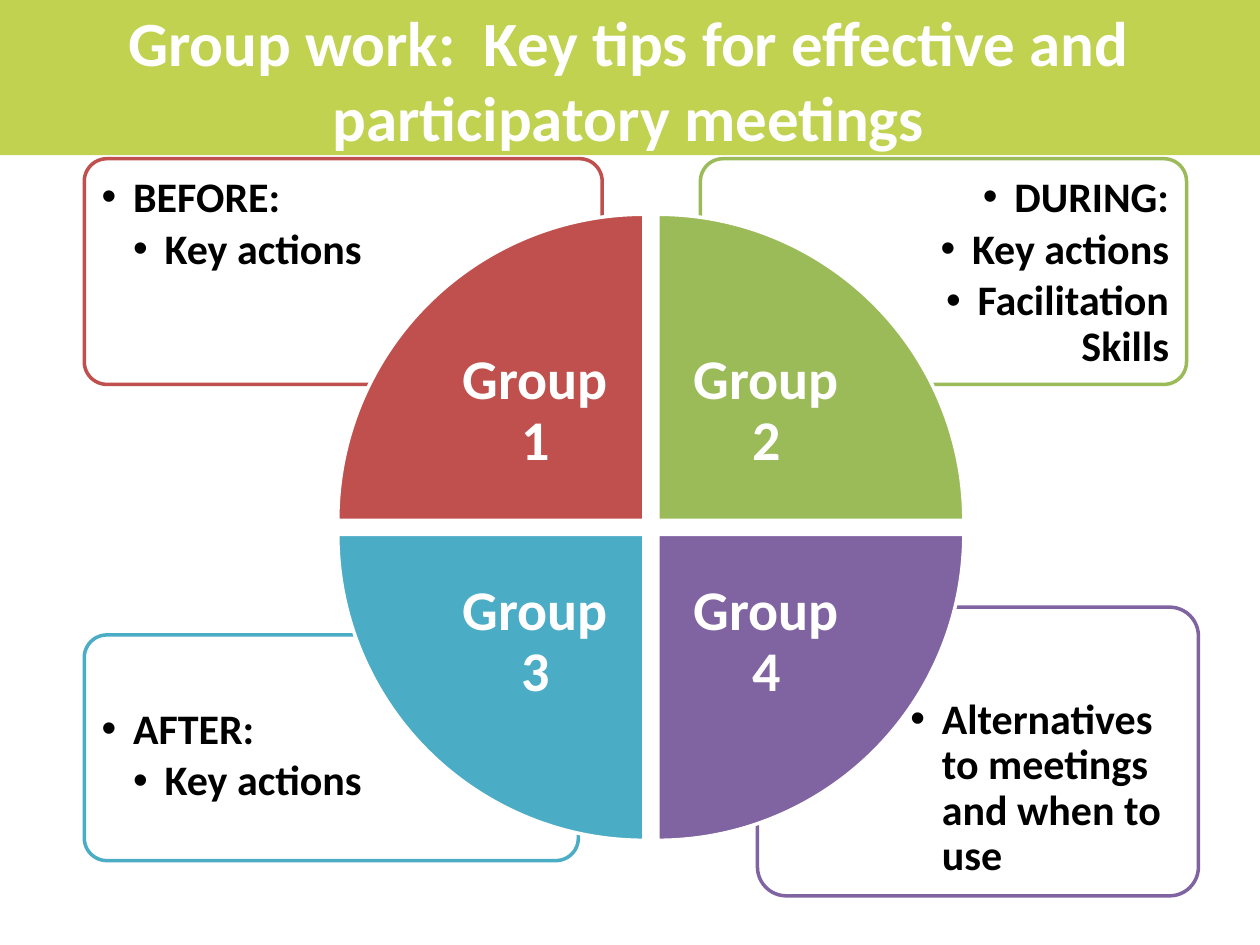
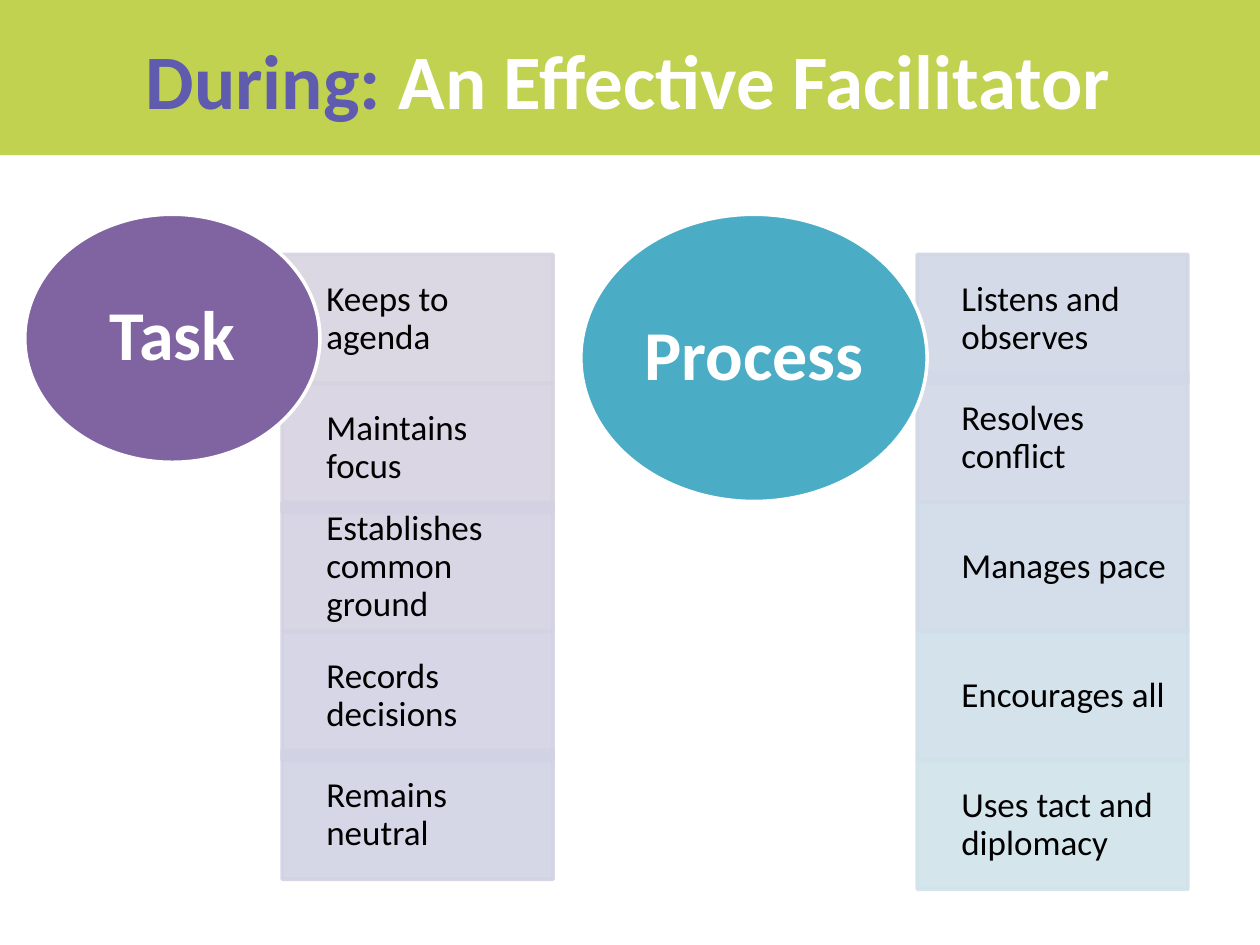
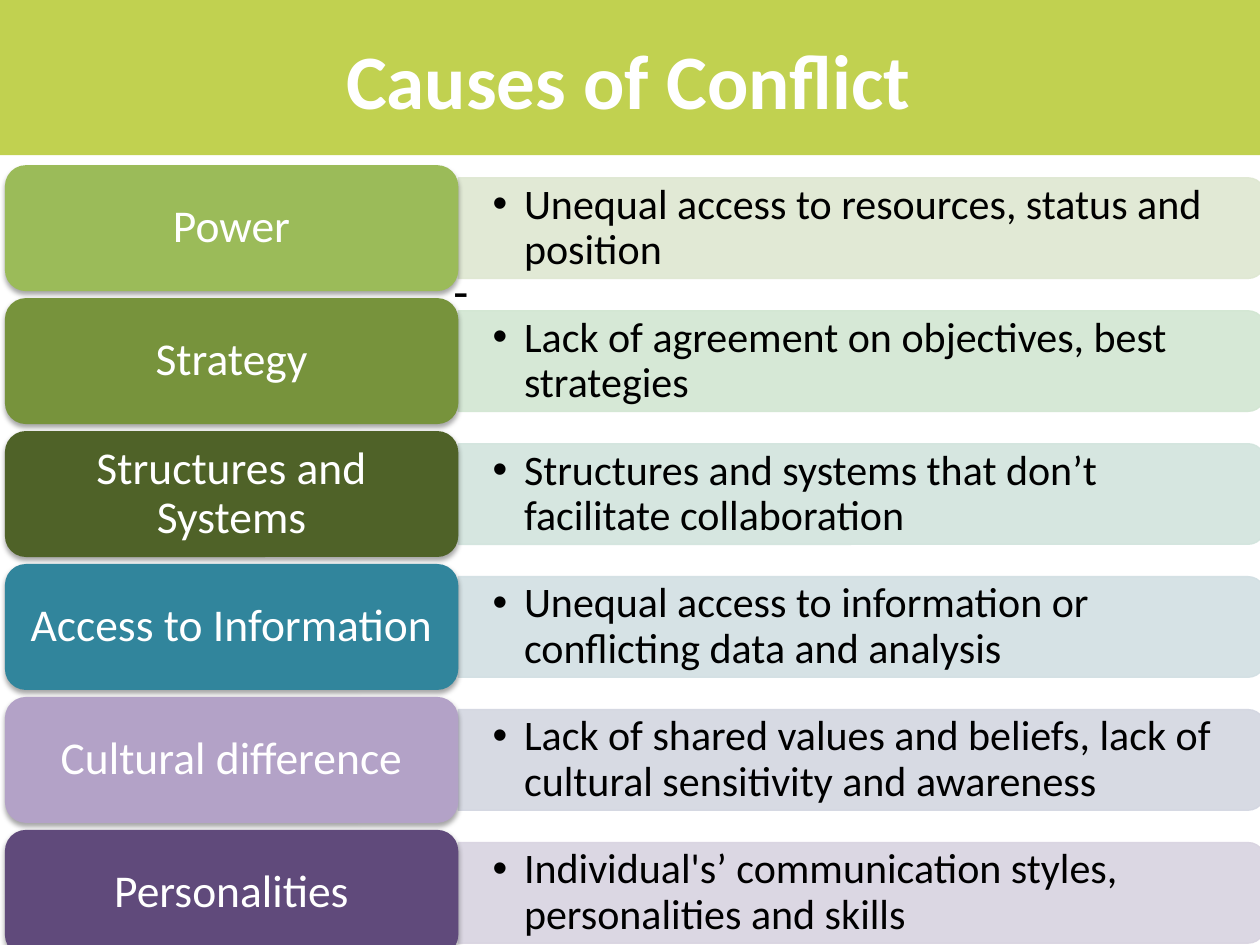
from dataclasses import dataclass
from itertools import accumulate

from lxml.etree import SubElement
from pptx import Presentation
from pptx.dml.color import RGBColor
from pptx.enum.shapes import MSO_SHAPE
from pptx.enum.text import MSO_ANCHOR, MSO_AUTO_SIZE, PP_ALIGN
from pptx.oxml.ns import qn
from pptx.util import Cm, Pt


@dataclass(frozen=True)
class Theme:
    font: str = "Calibri"
    band: str = "C1D150"
    white: str = "FFFFFF"
    black: str = "000000"
    accent: str = "5F5BAE"
    red: str = "C0504D"
    green: str = "9BBB59"
    blue: str = "4BACC6"
    purple: str = "8064A2"
    olive: str = "77933C"
    forest: str = "4F6228"
    teal: str = "31859C"
    lilac: str = "B3A2C7"
    plum: str = "604A7B"
    task_tints: tuple = ("D8D3E0", "D6D2E1", "D4D2E2", "D2D2E4", "D1D3E5")
    process_tints: tuple = ("D1D6E6", "D1D8E7", "D0DBE8", "D0DFE9", "D0E3EA")
    cause_tints: tuple = ("DEE7D1", "D2E6D2", "D2E4DD", "D2DFE3", "D3D6E1", "D8D3E0")
    title: int = 44
    long_title: int = 36
    oval: int = 40
    wedge: int = 32
    dash: int = 28
    label: int = 26
    body: int = 24
    item: int = 20


@dataclass(frozen=True)
class Box:
    left: float
    top: float
    width: float
    height: float

    def lengths(self):
        return Cm(self.left), Cm(self.top), Cm(self.width), Cm(self.height)


THEME = Theme()
BAND = Box(0, -0.05, 25.4, 3.18)
TITLE = Box(1.24, 0, 22.86, 3.18)


def write_text(paragraph, text, *, size, color=THEME.black, bold=False,
               align=PP_ALIGN.LEFT, spacing=0.9, after=0, depth=0):
    paragraph.alignment = align
    if depth:
        paragraph.level = depth
        properties = paragraph._p.get_or_add_pPr()
        properties.set("marL", str(Cm(0.635 * depth)))
        properties.set("indent", str(-Cm(0.635)))
        SubElement(properties, qn("a:buFont")).set("typeface", "Arial")
        SubElement(properties, qn("a:buChar")).set("char", "•")
    paragraph.line_spacing = spacing
    paragraph.space_after = Pt(after)
    run = paragraph.add_run()
    run.text = text
    run.font.name = THEME.font
    run.font.size = Pt(size)
    run.font.bold = bold
    run.font.color.rgb = RGBColor.from_string(color)


def prepare_frame(shape, margins=(0.25, 0.13, 0.25, 0.13), anchor=MSO_ANCHOR.MIDDLE, wrap=True):
    frame = shape.text_frame
    frame.word_wrap = wrap
    frame.auto_size = MSO_AUTO_SIZE.NONE
    frame.vertical_anchor = anchor
    (frame.margin_left, frame.margin_top,
     frame.margin_right, frame.margin_bottom) = map(Cm, margins)
    return frame


def add_text_box(slide, box, **frame_format):
    return prepare_frame(slide.shapes.add_textbox(*box.lengths()), **frame_format)


def add_panel(slide, kind, box, fill, line=None, line_width=2, opacity=100, rotation=0):
    shape = slide.shapes.add_shape(kind, *box.lengths())
    shape.rotation = rotation
    shape.shadow.inherit = False
    shape.fill.solid()
    shape.fill.fore_color.rgb = RGBColor.from_string(fill)
    if line:
        shape.line.color.rgb = RGBColor.from_string(line)
        shape.line.width = Pt(line_width)
    else:
        shape.line.fill.background()
    if opacity < 100:
        for color in shape.element.spPr.iter(qn("a:srgbClr")):
            SubElement(color, qn("a:alpha")).set("val", str(opacity * 1000))
    return shape


def add_shadow(shape):
    effects = shape.element.spPr.find(qn("a:effectLst"))
    shadow = SubElement(effects, qn("a:outerShdw"), blurRad=str(Pt(3)), dist=str(Pt(1.8)),
                        dir="5400000", rotWithShape="0")
    color = SubElement(shadow, qn("a:srgbClr"), val=THEME.black)
    SubElement(color, qn("a:alpha"), val="35000")


def add_titled_slide(presentation, *runs, size=THEME.title):
    slide = presentation.slides.add_slide(presentation.slide_layouts[5])
    title = slide.shapes.title
    title.left, title.top, title.width, title.height = TITLE.lengths()
    paragraph = prepare_frame(title).paragraphs[0]
    for text, color in runs:
        write_text(paragraph, text, size=size, color=color, bold=True,
                   align=PP_ALIGN.CENTER, spacing=1.0)
    return slide


def move_band_to_layout(slide):
    band = add_panel(slide, MSO_SHAPE.RECTANGLE, BAND, THEME.band)
    slide.slide_layout.shapes.element.insert(2, band.element)


def add_callout(slide, box, color, lines, on_right, on_bottom, align=PP_ALIGN.LEFT):
    shape = add_panel(slide, MSO_SHAPE.ROUNDED_RECTANGLE, box, THEME.white, line=color)
    shape.adjustments[0] = 0.1
    inset, width, height = 0.1, box.width * 0.67, box.height * 0.71
    left = box.left + (box.width - width - inset if on_right else inset)
    top = box.top + (box.height - height - inset if on_bottom else inset)
    frame = add_text_box(slide, Box(left, top, width, height),
                         margins=(0.25,) * 4, anchor=MSO_ANCHOR.TOP)
    for index, (text, depth) in enumerate(lines):
        paragraph = frame.add_paragraph() if index else frame.paragraphs[0]
        write_text(paragraph, text, size=THEME.body, bold=True, align=align,
                   after=3.6, depth=depth)


def add_wheel(slide, box, gap=0.28):
    wedge = (box.width - gap) / 2
    label = wedge * 0.71
    wedges = (
        ("Group 1", THEME.red, 0, 0, 0),
        ("Group 2", THEME.green, 1, 0, 90),
        ("Group 4", THEME.purple, 1, 1, 180),
        ("Group 3", THEME.blue, 0, 1, 270),
    )
    for text, color, column, row, rotation in wedges:
        left = box.left + column * (wedge + gap)
        top = box.top + row * (wedge + gap)
        add_panel(slide, MSO_SHAPE.PIE_WEDGE, Box(left, top, wedge, wedge), color,
                  line=THEME.white, rotation=rotation)
        label_left = left if column else left + wedge - label
        label_top = top if row else top + wedge - label
        frame = add_text_box(slide, Box(label_left, label_top, label, label),
                             margins=(0.63,) * 4)
        write_text(frame.paragraphs[0], text, size=THEME.wedge, color=THEME.white,
                   bold=True, align=PP_ALIGN.CENTER)


def add_oval_list(slide, box, oval, title, color, items, tints, steps):
    tops = accumulate(steps, initial=box.top)
    for text, tint, top in zip(items, tints, tops):
        shape = add_panel(slide, MSO_SHAPE.RECTANGLE, Box(box.left, top, box.width, 2.6),
                          tint, line=tint, opacity=90)
        frame = prepare_frame(shape, margins=(0.89, 0.4, 0.4, 0.4))
        write_text(frame.paragraphs[0], text, size=THEME.item)
    shape = add_panel(slide, MSO_SHAPE.OVAL, oval, color, line=THEME.white)
    frame = prepare_frame(shape, margins=(0,) * 4)
    write_text(frame.paragraphs[0], title, size=THEME.oval, color=THEME.white,
               bold=True, align=PP_ALIGN.CENTER)


def add_cause(slide, box, cause, color, detail, tint):
    label_width, bar_height = 9.14, 2.03
    bar = Box(box.left + label_width, box.top + (box.height - bar_height) / 2,
              box.width - label_width, bar_height)
    turned = Box(bar.left + (bar.width - bar.height) / 2,
                 bar.top + (bar.height - bar.width) / 2, bar.height, bar.width)
    add_panel(slide, MSO_SHAPE.ROUND_2_SAME_RECTANGLE, turned, tint, line=tint,
              line_width=0.75, opacity=90, rotation=90)
    frame = add_text_box(slide, Box(bar.left, bar.top, bar.width - 0.1, bar.height),
                         margins=(0.69, 0, 0.69, 0))
    write_text(frame.paragraphs[0], detail, size=THEME.body, after=3.6, depth=1)
    label = add_panel(slide, MSO_SHAPE.ROUNDED_RECTANGLE,
                      Box(box.left, box.top, label_width, box.height), color)
    add_shadow(label)
    frame = prepare_frame(label, margins=(0.28, 0.13, 0.28, 0.13))
    write_text(frame.paragraphs[0], cause, size=THEME.label, color=THEME.white,
               align=PP_ALIGN.CENTER)


def build_group_work(presentation):
    slide = add_titled_slide(
        presentation,
        ("Group work:  Key tips for effective and participatory meetings", THEME.white),
        size=THEME.long_title)
    move_band_to_layout(slide)
    add_callout(slide, Box(15.27, 12.24, 8.89, 5.82), THEME.purple,
                [("Alternatives to meetings and when to use", 1)], True, True)
    add_callout(slide, Box(1.7, 12.8, 9.96, 4.55), THEME.blue,
                [("AFTER:", 1), ("Key actions", 2)], False, True)
    add_callout(slide, Box(14.12, 3.2, 9.8, 4.55), THEME.green,
                [("DURING:", 1), ("Key actions", 2), ("Facilitation Skills", 2)],
                True, False, align=PP_ALIGN.RIGHT)
    add_callout(slide, Box(1.7, 3.2, 10.44, 4.55), THEME.red,
                [("BEFORE:", 1), ("Key actions", 2)], False, False)
    add_wheel(slide, Box(6.81, 4.32, 12.62, 12.62))


def build_facilitator(presentation):
    slide = add_titled_slide(presentation, ("During: ", THEME.accent),
                             ("An Effective Facilitator", THEME.white))
    add_oval_list(slide, Box(5.69, 5.13, 5.46, 12.6), Box(0.5, 4.32, 5.95, 5), "Task",
                  THEME.purple,
                  ("Keeps to agenda", "Maintains focus", "Establishes common ground",
                   "Records decisions", "Remains neutral"),
                  THEME.task_tints, (2.6, 2.4, 2.6, 2.4))
    add_oval_list(slide, Box(18.49, 5.13, 5.46, 12.8), Box(11.71, 4.32, 6.98, 5.79), "Process",
                  THEME.blue,
                  ("Listens and observes", "Resolves conflict", "Manages pace",
                   "Encourages all", "Uses tact and diplomacy"),
                  THEME.process_tints, (2.4, 2.6, 2.6, 2.6))


def build_causes(presentation):
    slide = add_titled_slide(presentation, ("Causes of Conflict", THEME.white))
    dash = add_text_box(slide, Box(8.89, 5.13, 0.81, 1.45), anchor=MSO_ANCHOR.TOP, wrap=False)
    write_text(dash.paragraphs[0], "-", size=THEME.dash, spacing=1.0)
    causes = (
        ("Power", THEME.green, "Unequal access to resources, status and position"),
        ("Strategy", THEME.olive, "Lack of agreement on objectives, best strategies"),
        ("Structures and Systems", THEME.forest,
         "Structures and systems that don’t facilitate collaboration"),
        ("Access to Information", THEME.teal,
         "Unequal access to information or conflicting data and analysis"),
        ("Cultural difference", THEME.lilac,
         "Lack of shared values and beliefs, lack of cultural sensitivity and awareness"),
        ("Personalities", THEME.plum,
         "Individual's’ communication styles, personalities and skills"),
    )
    for row, ((cause, color, detail), tint) in enumerate(zip(causes, THEME.cause_tints)):
        add_cause(slide, Box(0.1, 3.33 + row * 2.68, 25.4, 2.54), cause, color, detail, tint)


def main():
    presentation = Presentation()
    presentation.slide_width = Cm(25.4)
    presentation.slide_height = Cm(19.05)
    build_group_work(presentation)
    build_facilitator(presentation)
    build_causes(presentation)
    presentation.save("out.pptx")


if __name__ == "__main__":
    main()
